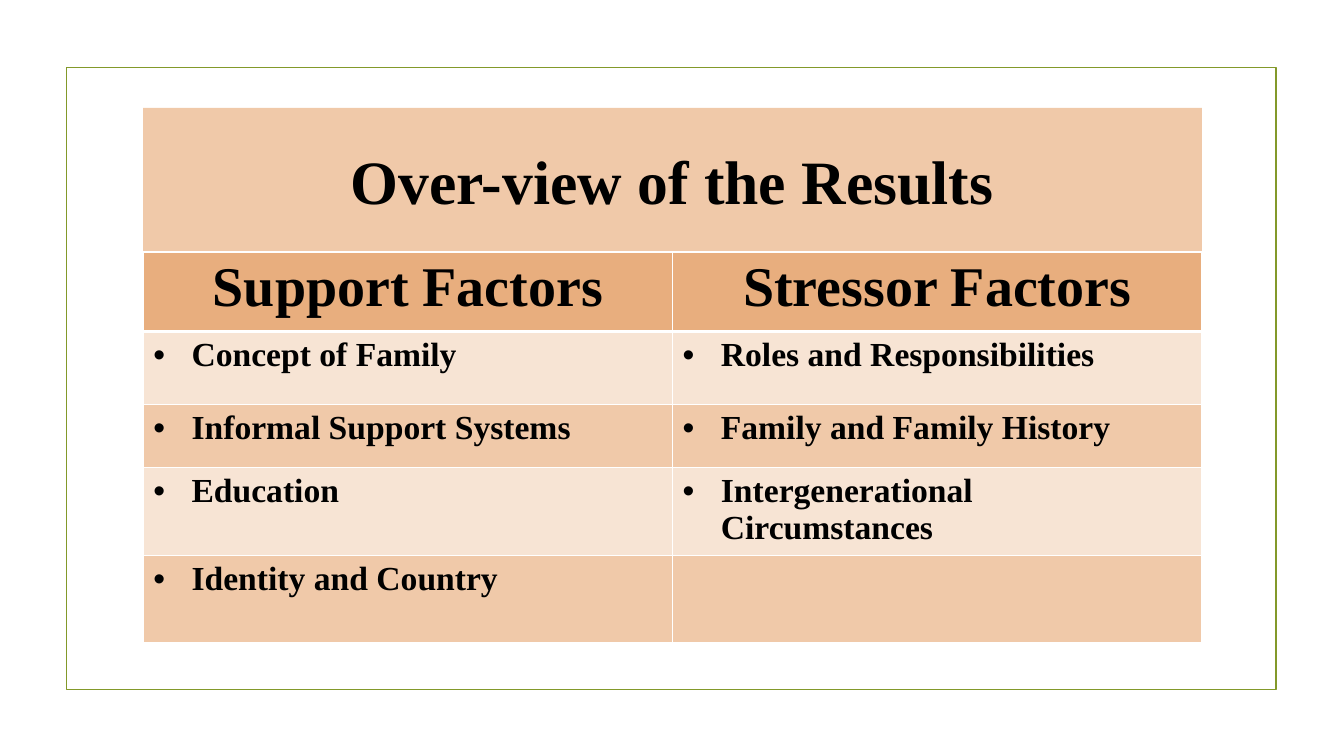
from lxml.etree import SubElement
from pptx import Presentation
from pptx.dml.color import RGBColor
from pptx.enum.shapes import MSO_SHAPE as SHAPE
from pptx.enum.text import MSO_ANCHOR as ANCHOR, PP_ALIGN as ALIGN
from pptx.oxml.ns import qn
from pptx.util import Inches, Pt

FONT = "Times New Roman"
HEADER, DARK, LIGHT = "E8AE7E", "F0C9A9", "F7E4D4"
ROWS = [
    ("Support Factors", "Stressor Factors"),
    ("Concept of Family", "Roles and Responsibilities"),
    ("Informal Support Systems", "Family and Family History"),
    ("Education", "Intergenerational Circumstances"),
    ("Identity and Country", ""),
]
ROW_HEIGHTS = [0.79, 0.72, 0.63, 0.87, 0.87]


def color(value):
    return RGBColor.from_string(value)


def fill(obj, value):
    obj.fill.solid()
    obj.fill.fore_color.rgb = color(value)


def write(tf, text, size=24, align=ALIGN.LEFT, bullet=False):
    p = tf.paragraphs[0]
    p.alignment = align
    if bullet:
        pPr = p._p.get_or_add_pPr()
        pPr.set("marL", str(Inches(0.38)))
        pPr.set("indent", str(-Inches(0.38)))
        SubElement(pPr, qn("a:buFont"), typeface="Arial")
        SubElement(pPr, qn("a:buChar"), char="•")
    r = p.add_run()
    r.text = text
    r.font.name, r.font.size, r.font.bold = FONT, Pt(size), True
    r.font.color.rgb = color("000000")


def add_borders(cell, top=1, bottom=1):
    tcPr = cell._tc.get_or_add_tcPr()
    for side, width in (("L", 1), ("R", 1), ("T", top), ("B", bottom)):
        ln = SubElement(tcPr, qn(f"a:ln{side}"), w=str(Pt(width)))
        SubElement(SubElement(ln, qn("a:solidFill")), qn("a:srgbClr"), val="FFFFFF")


def add_frame(s, x, y, w, h):
    sp = s.shapes.add_shape(SHAPE.RECTANGLE, Inches(x), Inches(y), Inches(w), Inches(h))
    sp.shadow.inherit = False
    sp.fill.background()
    sp.line.color.rgb = color("83992A")
    sp.line.width = Pt(1.25)


def add_title(s, x, y, w, h):
    sp = s.shapes.title
    sp.left, sp.top, sp.width, sp.height = map(Inches, (x, y, w, h))
    fill(sp, DARK)
    sp.text_frame.vertical_anchor = ANCHOR.MIDDLE
    write(sp.text_frame, "Over-view of the Results", size=44, align=ALIGN.CENTER)


def add_factors(s, x, y, w):
    table = s.shapes.add_table(len(ROWS), 2, Inches(x), Inches(y),
                               Inches(w), Inches(sum(ROW_HEIGHTS))).table
    for col in table.columns:
        col.width = Inches(w / 2)
    for i, (texts, height) in enumerate(zip(ROWS, ROW_HEIGHTS)):
        table.rows[i].height = Inches(height)
        for j, text in enumerate(texts):
            cell = table.cell(i, j)
            add_borders(cell, top=3 if i == 1 else 1, bottom=3 if i == 0 else 1)
            if i == 0:
                fill(cell, HEADER)
                write(cell.text_frame, text, size=40, align=ALIGN.CENTER)
            else:
                fill(cell, LIGHT if i % 2 else DARK)
                if text:
                    write(cell.text_frame, text, bullet=True)


def results_slide(prs):
    s = prs.slides.add_slide(prs.slide_layouts[5])
    x, y, w, title_height = 1.42, 1.07, 10.5, 1.43
    add_frame(s, 0.66, 0.67, 12, 6.17)
    add_title(s, x, y, w, title_height)
    add_factors(s, x, y + title_height, w)


def main():
    prs = Presentation()
    prs.slide_width, prs.slide_height = Inches(13.33), Inches(7.5)
    results_slide(prs)
    prs.save("out.pptx")


if __name__ == "__main__":
    main()
